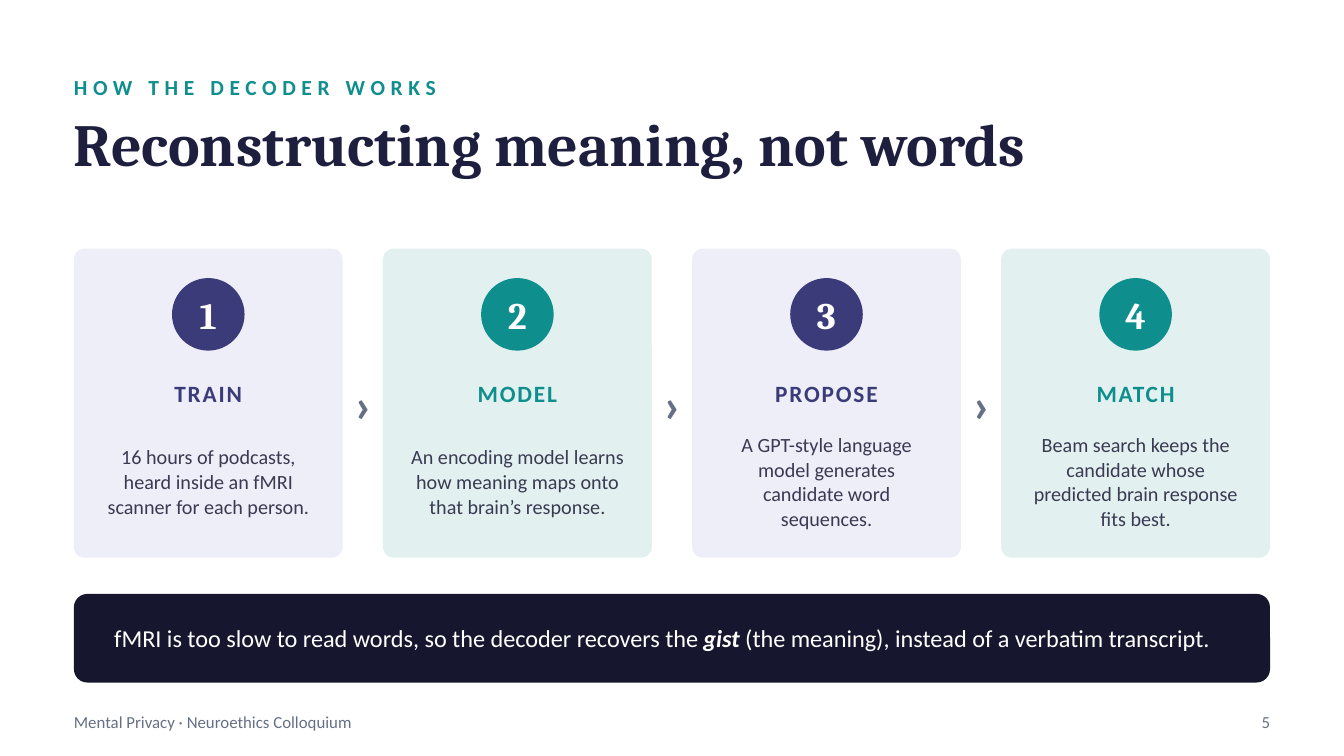
"""Build the slide that explains the four steps of the decoder."""
from pptx import Presentation
from pptx.dml.color import RGBColor
from pptx.enum.shapes import MSO_SHAPE as Shape
from pptx.enum.text import MSO_ANCHOR as Anchor, PP_ALIGN as Align
from pptx.util import Pt

COLORS = {
    "white": "FFFFFF", "ink": "1E1E3F", "body": "3A3A52", "muted": "667085",
    "indigo": "3B3B7A", "teal": "0E8F8E", "lavender": "EDEEF7", "mint": "E2F1F0",
    "night": "16162E",
}
FORMATS = {
    "kicker": {"name": "Calibri", "size": Pt(11.5), "bold": True},
    "title": {"name": "Cambria", "size": Pt(32), "bold": True},
    "number": {"name": "Cambria", "size": Pt(20), "bold": True},
    "label": {"name": "Calibri", "size": Pt(12.5), "bold": True},
    "body": {"name": "Calibri", "size": Pt(10.8)},
    "chevron": {"name": "Calibri", "size": Pt(26), "bold": True},
    "takeaway": {"name": "Calibri", "size": Pt(13)},
    "gist": {"name": "Calibri", "size": Pt(13), "bold": True, "italic": True},
    "footer": {"name": "Calibri", "size": Pt(9)},
}
TRACKING = {"kicker": 3, "label": 1}
STEPS = [
    ("TRAIN", "16 hours of podcasts, heard inside an fMRI scanner for each person."),
    ("MODEL", "An encoding model learns how meaning maps onto that brain’s response."),
    ("PROPOSE", "A GPT-style language model generates candidate word sequences."),
    ("MATCH", "Beam search keeps the candidate whose predicted brain response fits best."),
]
THEMES = [("indigo", "lavender"), ("teal", "mint")]


def color(name):
    """Return the named colour."""
    return RGBColor.from_string(COLORS[name])


def write(shape, runs, ink, align=Align.LEFT, anchor=Anchor.MIDDLE, spacing=None):
    """Fill a shape with one paragraph of (text, format) runs."""
    frame = shape.text_frame
    settings = {"word_wrap": True, "vertical_anchor": anchor, "margin_left": 0,
                "margin_right": 0, "margin_top": 0, "margin_bottom": 0}
    for key, value in settings.items():
        setattr(frame, key, value)
    paragraph = frame.paragraphs[0]
    paragraph.alignment = align
    if spacing:
        paragraph.line_spacing = spacing
    for text, style in runs:
        run = paragraph.add_run()
        run.text = text
        for key, value in FORMATS[style].items():
            setattr(run.font, key, value)
        run.font.color.rgb = color(ink)
        if style in TRACKING:
            run.font._element.set("spc", str(TRACKING[style] * 100))


def add_text(slide, box, text, style, ink, **layout):
    """Add a text box with a single run."""
    shape = slide.shapes.add_textbox(*map(Pt, box))
    write(shape, [(text, style)], ink, **layout)


def add_panel(slide, kind, box, fill, radius=None):
    """Add a flat filled shape, with corners rounded to a radius."""
    shape = slide.shapes.add_shape(kind, *map(Pt, box))
    shape.shadow.inherit = False
    shape.fill.solid()
    shape.fill.fore_color.rgb = color(fill)
    shape.line.fill.background()
    if radius:
        shape.adjustments[0] = radius / min(box[2:])
    return shape


def add_header(slide, box):
    """Place the kicker above the title."""
    left, top, width, height = box
    add_text(slide, (left, top, width, 21.6), "HOW THE DECODER WORKS", "kicker", "teal")
    add_text(slide, (left, top + 23, width, height - 23),
             "Reconstructing meaning, not words", "title", "ink",
             anchor=Anchor.TOP, spacing=0.98)


def add_card(slide, box, number, label, body, theme):
    """Place one numbered step card."""
    left, top, width, height = box
    accent, fill = theme
    add_panel(slide, Shape.ROUNDED_RECTANGLE, box, fill, radius=5.76)
    side = 38.9
    badge = add_panel(slide, Shape.OVAL,
                      (left + (width - side) / 2, top + 15.8, side, side), accent)
    write(badge, [(str(number), "number")], "white", align=Align.CENTER)
    add_text(slide, (left + 10.8, top + 66.2, width - 21.6, 23), label, "label", accent,
             align=Align.CENTER)
    add_text(slide, (left + 13, top + 92.2, width - 26, 64.8), body, "body", "body",
             align=Align.CENTER, spacing=1.02)


def add_steps(slide, box, gap=21.6):
    """Spread the step cards over a row with chevrons in the gaps."""
    left, top, width, height = box
    card_width = (width - gap * (len(STEPS) - 1)) / len(STEPS)
    for index, (label, body) in enumerate(STEPS):
        x = left + index * (card_width + gap)
        if index:
            add_text(slide, (x - gap / 2 - 12.2, top + 61.2, 24.4, 43.2), "›", "chevron",
                     "muted", align=Align.CENTER)
        add_card(slide, (x, top, card_width, height), index + 1, label, body,
                 THEMES[index % len(THEMES)])


def add_takeaway(slide, box):
    """Place the dark banner with the main message."""
    left, top, width, height = box
    add_panel(slide, Shape.ROUNDED_RECTANGLE, box, "night", radius=7.2)
    message = slide.shapes.add_textbox(
        *map(Pt, (left + 21.6, top, width - 43.2, height)))
    write(message, [
        ("fMRI is too slow to read words, so the decoder recovers the ", "takeaway"),
        ("gist", "gist"),
        (" (the meaning), instead of a verbatim transcript.", "takeaway"),
    ], "white")


def add_footer(slide, box):
    """Place the talk name on the left and the page number on the right."""
    left, top, width, height = box
    add_text(slide, (left, top, 432, height), "Mental Privacy · Neuroethics Colloquium",
             "footer", "muted")
    add_text(slide, (left + width - 36, top, 36, height), "5", "footer", "muted",
             align=Align.RIGHT)


def main():
    """Build and save the presentation."""
    presentation = Presentation()
    presentation.slide_width, presentation.slide_height = Pt(720), Pt(405)
    slide = presentation.slides.add_slide(presentation.slide_layouts[6])
    left, width = 39.6, 640.8
    add_header(slide, (left, 36, width, 84.2))
    add_steps(slide, (left, 133.2, width, 165.6))
    add_takeaway(slide, (left, 318.2, width, 47.5))
    add_footer(slide, (left, 375.8, width, 21.6))
    presentation.save("out.pptx")


if __name__ == "__main__":
    main()
